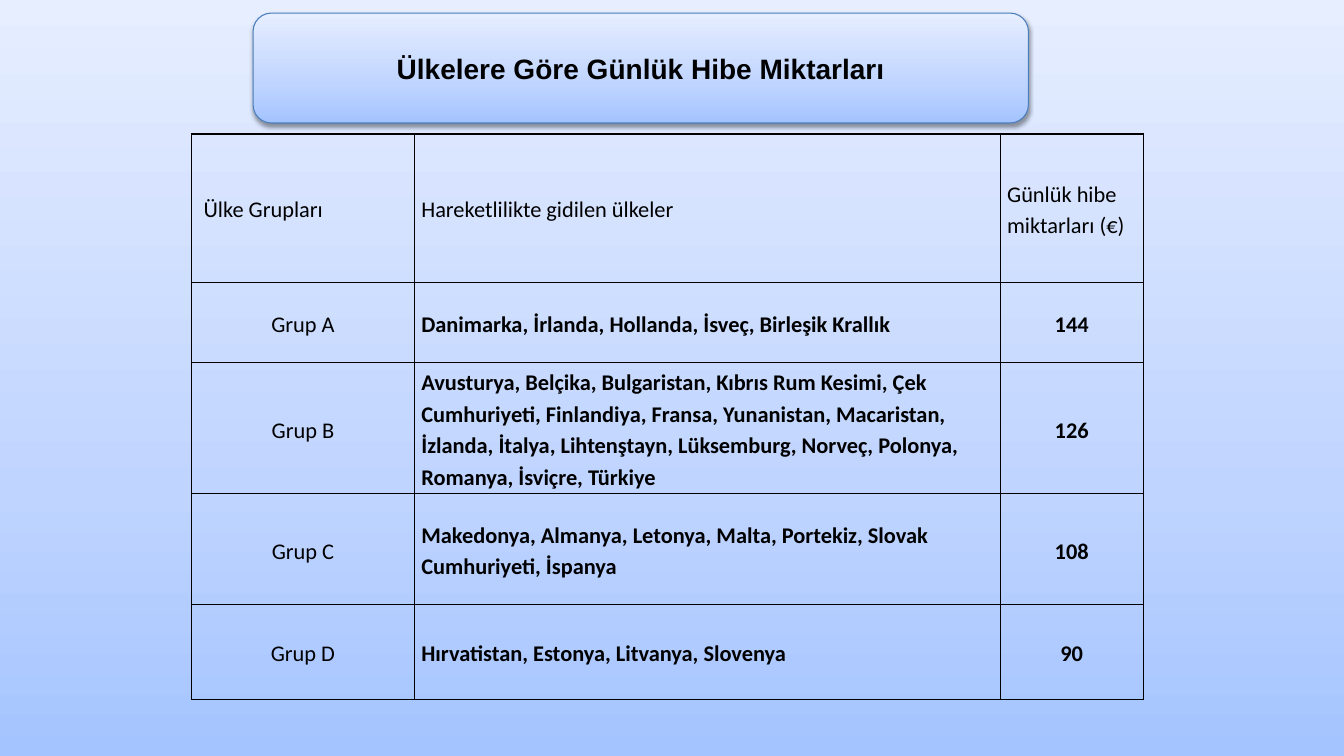
from copy import deepcopy
from dataclasses import dataclass

from lxml.etree import SubElement
from pptx import Presentation
from pptx.dml.color import RGBColor
from pptx.enum.shapes import MSO_SHAPE
from pptx.enum.text import MSO_ANCHOR, MSO_AUTO_SIZE, PP_ALIGN
from pptx.oxml.ns import qn
from pptx.util import Inches, Pt


@dataclass(frozen=True)
class Theme:
    gradient: tuple = ((0, "A4C4FF"), (0.35, "BFD4FF"), (1, "E6EEFF"))
    outline: str = "4B7EBC"
    ink: str = "000000"
    title_font: str = "Arial"
    body_font: str = "Calibri"
    title_size: int = 20
    body_size: int = 16


def write(frame, text, font, size, color, bold=False, align=PP_ALIGN.LEFT, spacing=1.0):
    para = frame.paragraphs[0]
    para.alignment = align
    para.line_spacing = spacing
    span = para.add_run()
    span.text = text
    span.font.name = font
    span.font.size = Pt(size)
    span.font.bold = bold
    span.font.color.rgb = RGBColor.from_string(color)


class SlideBuilder:
    def __init__(self, page, theme):
        self.page = page
        self.theme = theme

    def paint_gradient(self, fill, owner):
        fill.gradient()
        fill.gradient_angle = 90
        stops = owner.xpath(".//a:gsLst")[0]
        stops.append(deepcopy(stops[0]))
        for stop, (position, color) in zip(fill.gradient_stops, self.theme.gradient):
            stop.position = position
            stop.color.rgb = RGBColor.from_string(color)

    def background(self):
        self.paint_gradient(self.page.background.fill, self.page._element)

    def shadow(self, shape):
        shape.shadow.inherit = False
        effects = shape._element.spPr.find(qn("a:effectLst"))
        outer = SubElement(effects, qn("a:outerShdw"), blurRad=str(Pt(3.1)),
                           dist=str(Pt(1.6)), dir="5400000", rotWithShape="0")
        color = SubElement(outer, qn("a:srgbClr"), val=self.theme.ink)
        SubElement(color, qn("a:alpha"), val="38000")

    def title(self, text, *bounds):
        panel = self.page.shapes.add_shape(MSO_SHAPE.ROUNDED_RECTANGLE, *bounds)
        self.paint_gradient(panel.fill, panel._element)
        panel.line.color.rgb = RGBColor.from_string(self.theme.outline)
        panel.line.width = Pt(0.75)
        self.shadow(panel)
        title = self.page.shapes.title
        title._element.addprevious(panel._element)
        title.left, title.top, title.width, title.height = bounds
        frame = title.text_frame
        frame.auto_size = MSO_AUTO_SIZE.NONE
        frame.word_wrap = True
        frame.vertical_anchor = MSO_ANCHOR.MIDDLE
        write(frame, text, self.theme.title_font, self.theme.title_size,
              self.theme.ink, bold=True, align=PP_ALIGN.CENTER)

    def borders(self, cell):
        properties = cell._tc.get_or_add_tcPr()
        for side in ("lnL", "lnR", "lnT", "lnB"):
            line = SubElement(properties, qn(f"a:{side}"), w=str(Pt(1)))
            paint = SubElement(line, qn("a:solidFill"))
            SubElement(paint, qn("a:srgbClr"), val=self.theme.ink)

    def cell(self, cell, text, bold, align):
        cell.margin_left = cell.margin_right = Inches(0.07)
        cell.margin_top = cell.margin_bottom = 0
        cell.vertical_anchor = MSO_ANCHOR.MIDDLE
        self.borders(cell)
        cell.fill.background()
        write(cell.text_frame, text, self.theme.body_font, self.theme.body_size,
              self.theme.ink, bold=bold, align=align, spacing=1.15)

    def table(self, rows, left, top, widths, heights):
        table = self.page.shapes.add_table(
            len(rows), len(widths), Inches(left), Inches(top),
            Inches(sum(widths)), Inches(sum(heights))).table
        table.first_row = table.horz_banding = False
        for column, width in zip(table.columns, widths):
            column.width = Inches(width)
        for row, height in zip(table.rows, heights):
            row.height = Inches(height)
        for row_index, texts in enumerate(rows):
            for column_index, text in enumerate(texts):
                centered = row_index > 0 and column_index != 1
                self.cell(table.cell(row_index, column_index), text,
                          bold=row_index > 0 and column_index > 0,
                          align=PP_ALIGN.CENTER if centered else PP_ALIGN.LEFT)


GRANTS = (
    ("\u00a0Ülke Grupları", "Hareketlilikte gidilen ülkeler", "Günlük hibe miktarları (€)"),
    ("Grup A", "Danimarka, İrlanda, Hollanda, İsveç, Birleşik Krallık", "144"),
    ("Grup B", "Avusturya, Belçika, Bulgaristan, Kıbrıs Rum Kesimi, Çek Cumhuriyeti, "
               "Finlandiya, Fransa, Yunanistan, Macaristan, İzlanda, İtalya, Lihtenştayn, "
               "Lüksemburg, Norveç, Polonya, Romanya, İsviçre, Türkiye", "126"),
    ("Grup C", "Makedonya, Almanya, Letonya, Malta, Portekiz, Slovak Cumhuriyeti, İspanya", "108"),
    ("Grup D", "Hırvatistan, Estonya, Litvanya, Slovenya", "90"),
)


def main():
    deck = Presentation()
    deck.slide_width, deck.slide_height = Inches(13.33), Inches(7.5)
    page = deck.slides.add_slide(deck.slide_layouts.get_by_name("Title Only"))
    builder = SlideBuilder(page, Theme())
    builder.background()
    builder.title("Ülkelere Göre Günlük Hibe Miktarları",
                  Inches(2.51), Inches(0.13), Inches(7.69), Inches(1.09))
    builder.table(GRANTS, 1.9, 1.33, widths=(2.21, 5.81, 1.42),
                  heights=(1.47, 0.8, 1.3, 1.1, 0.94))
    deck.save("out.pptx")


if __name__ == "__main__":
    main()
